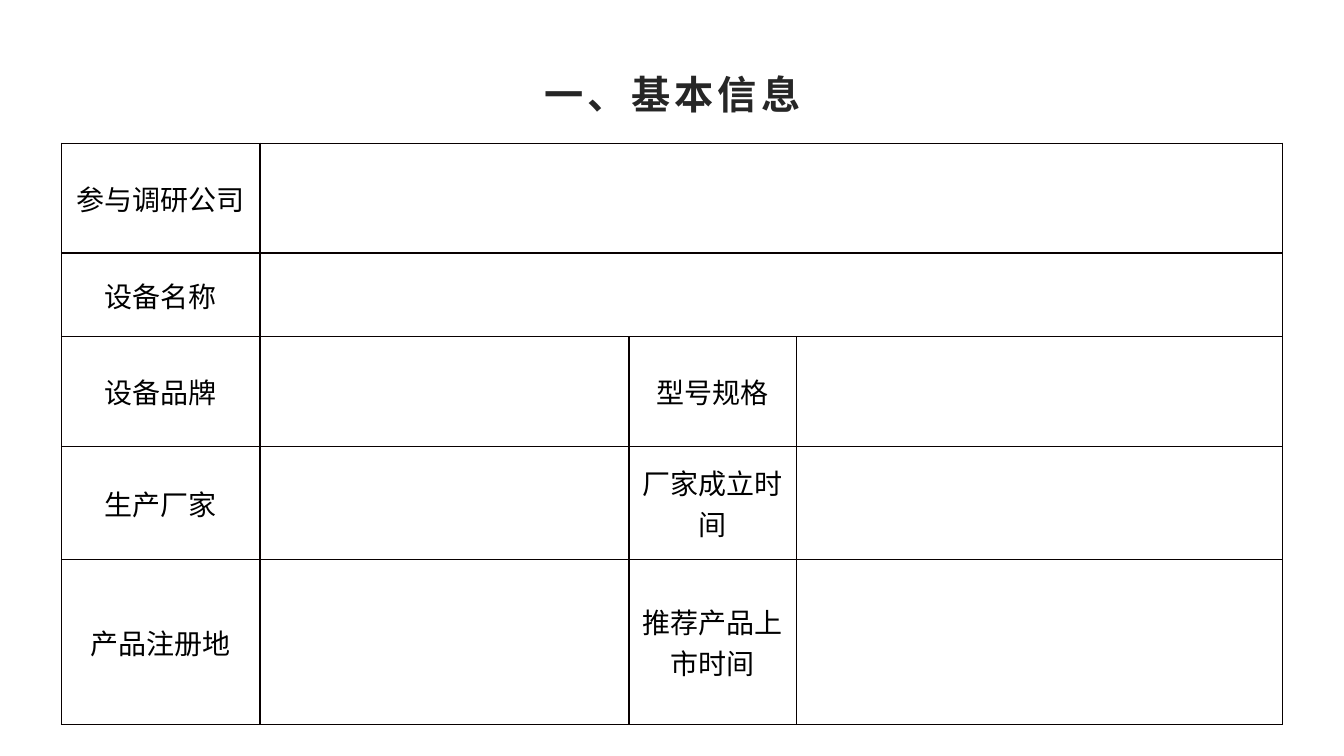
from dataclasses import dataclass

from lxml import etree
from pptx import Presentation
from pptx.dml.color import RGBColor
from pptx.enum.text import MSO_ANCHOR, PP_ALIGN
from pptx.oxml.ns import qn
from pptx.util import Emu, Pt

CENTER = PP_ALIGN.CENTER
MIDDLE, BOTTOM = MSO_ANCHOR.MIDDLE, MSO_ANCHOR.BOTTOM
EMU_PER_PX = 9144  # 100 px to the inch


@dataclass(frozen=True)
class Theme:
    title_font: str = "Arial"
    label_font: str = "Noto Sans CJK SC"
    title_size: int = 28
    label_size: int = 20
    title_spacing: int = 3
    border_width: int = 1
    title_color: str = "262626"
    label_color: str = "000000"
    border_color: str = "080000"


THEME = Theme()

PAGE_SIZE = (1333, 750)
TITLE_BOX = (207, 21, 920, 100)
FORM_BOX = (61, 142, 1211, 578)
COLUMN_WIDTHS = (197, 366, 166, 482)
# Row height, first label, second label (None: the answer spans the row)
FORM_ROWS = (
    (109, "参与调研公司", None),
    (83, "设备名称", None),
    (109, "设备品牌", "型号规格"),
    (112, "生产厂家", "厂家成立时间"),
    (164, "产品注册地", "推荐产品上市时间"),
)


def px(length):
    return Emu(length * EMU_PER_PX)


def add_span(para, text, font, size, color, bold=False, spacing=0):
    para.alignment = CENTER
    span = para.add_run()
    span.text = text
    span.font.name = font
    span.font.size = Pt(size)
    span.font.bold = bold
    span.font.color.rgb = RGBColor.from_string(color)
    properties = span.font._element
    if spacing:
        properties.set("spc", str(spacing * 100))
    latin = properties.find(qn("a:latin"))
    east_asian = etree.Element(qn("a:ea"), typeface=font)
    latin.addnext(east_asian)


def style_cell(cell):
    cell.vertical_anchor = MIDDLE
    cell.margin_left = cell.margin_right = px(7)
    cell.margin_top = cell.margin_bottom = 0
    cell.fill.background()
    properties = cell._tc.get_or_add_tcPr()
    for index, side in enumerate(("lnL", "lnR", "lnT", "lnB")):
        line = etree.Element(qn(f"a:{side}"), w=str(Pt(THEME.border_width)))
        fill = etree.SubElement(line, qn("a:solidFill"))
        etree.SubElement(fill, qn("a:srgbClr"), val=THEME.border_color)
        properties.insert(index, line)


def add_title(page, box, text):
    frame = page.shapes.add_textbox(*map(px, box)).text_frame
    frame.word_wrap = True
    frame.vertical_anchor = BOTTOM
    add_span(frame.paragraphs[0], text, THEME.title_font, THEME.title_size,
             THEME.title_color, bold=True, spacing=THEME.title_spacing)


def add_form(page, box, widths, rows):
    table = page.shapes.add_table(len(rows), len(widths), *map(px, box)).table
    table.first_row = table.horz_banding = False
    for column, width in zip(table.columns, widths):
        column.width = px(width)

    for row_index, (height, *labels) in enumerate(rows):
        table.rows[row_index].height = px(height)
        cells = [table.cell(row_index, i) for i in range(len(widths))]
        for cell in cells:
            style_cell(cell)
        # Labels stand in every other column, answers between them
        for cell, label in zip(cells[::2], labels):
            if label:
                add_span(cell.text_frame.paragraphs[0], label,
                         THEME.label_font, THEME.label_size, THEME.label_color)
        if labels[1] is None:
            cells[1].merge(cells[-1])


def main():
    deck = Presentation()
    deck.slide_width, deck.slide_height = map(px, PAGE_SIZE)
    page = deck.slides.add_slide(deck.slide_layouts[6])
    add_form(page, FORM_BOX, COLUMN_WIDTHS, FORM_ROWS)
    add_title(page, TITLE_BOX, "一、基本信息")
    deck.save("out.pptx")


if __name__ == "__main__":
    main()
